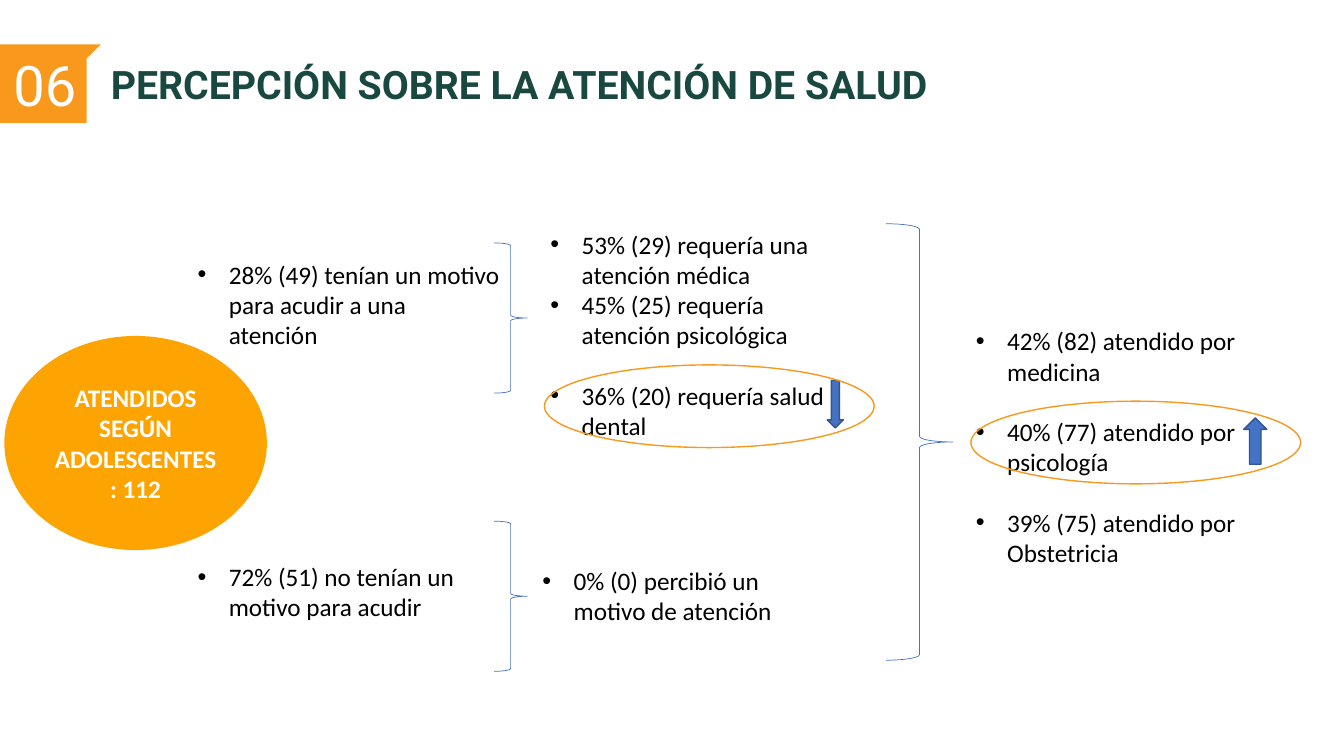
from pptx import Presentation, util as u
from pptx.dml.color import RGBColor
from pptx.enum import shapes, text
from pptx.oxml import parse_xml
from pptx.oxml.ns import nsdecls

PX = 9144  # 100 px to the inch
COLORS = {"title": "184840", "flag": "F8981C", "bubble": "FEA402", "blue": "4472C4",
          "edge": "325491", "white": "FFFFFF", "black": "000000"}
KIND = shapes.MSO_SHAPE
LINE_GAP = 21.6  # one empty line of 18 pt text, in points


def style_text(para, words, color, **font):
    span = para.add_run()
    span.text = words
    span.font.color.rgb = RGBColor.from_string(COLORS[color])
    for name, value in font.items():
        setattr(span.font, name, value)


def style_shape(shape, fill, line, width=1):
    shape.shadow.inherit = False
    if fill:
        shape.fill.solid()
        shape.fill.fore_color.rgb = RGBColor.from_string(COLORS[fill])
    else:
        shape.fill.background()
    if line:
        shape.line.color.rgb = RGBColor.from_string(COLORS[line])
        shape.line.width = u.Pt(width)
    else:
        shape.line.fill.background()


deck = Presentation()
deck.slide_width, deck.slide_height = 1333 * PX, 750 * PX
page = deck.slides.add_slide(deck.slide_layouts[4])  # title and four bodies

# Title
title = page.shapes.title
for name, value in zip(("left", "top", "width", "height"), (100, 34, 1084, 105)):
    setattr(title, name, value * PX)
for name, value in {"vertical_anchor": text.MSO_ANCHOR.MIDDLE, "word_wrap": True,
                    "auto_size": text.MSO_AUTO_SIZE.NONE}.items():
    setattr(title.text_frame, name, value)
para = title.text_frame.paragraphs[0]
para.alignment, para.line_spacing = text.PP_ALIGN.LEFT, 0.9
style_text(para, "PERCEPCIÓN SOBRE LA ATENCIÓN DE SALUD", "title",
           name="Roboto", size=u.Pt(28), bold=True)

# Section number flag
builder = page.shapes.build_freeform(-1, 44, scale=PX)
builder.add_line_segments([(-1, 122), (86, 122), (86, 58), (100, 44)], close=True)
flag = builder.convert_to_shape()
style_shape(flag, "flag", None)
for name, value in {"margin_left": 10 * PX, "margin_top": 10 * PX, "margin_right": 20 * PX,
                    "margin_bottom": 10 * PX, "word_wrap": True,
                    "vertical_anchor": text.MSO_ANCHOR.MIDDLE}.items():
    setattr(flag.text_frame, name, value)
para = flag.text_frame.paragraphs[0]
para.alignment = text.PP_ALIGN.CENTER
style_text(para, "06", "white", name="Roboto", size=u.Pt(40), bold=False)

# Bullet lists: place, then each item with the empty lines above it
lists = [
    ((186, 252, 320, 374), [("28% (49) tenían un motivo para acudir a una atención", 0),
                            ("72% (51) no tenían un motivo para acudir", 7)]),
    ((536, 222, 310, 222), [("53% (29) requería una atención médica", 0),
                            ("45% (25) requería atención psicológica", 0),
                            ("36% (20) requería salud dental", 1)]),
    ((958, 318, 310, 252), [("42% (82) atendido por medicina", 0),
                            ("40% (77) atendido por psicología", 1),
                            ("39% (75) atendido por Obstetricia", 1)]),
    ((528, 556, 310, 71), [("0% (0) percibió un motivo de atención", 0)]),
]
bodies = [box for box in page.placeholders if 1 <= box.placeholder_format.idx <= 4]
for box, (place, items) in zip(bodies, lists):
    for name, value in zip(("left", "top", "width", "height"), place):
        setattr(box, name, value * PX)
    for name, value in {"vertical_anchor": text.MSO_ANCHOR.TOP, "word_wrap": True,
                        "auto_size": text.MSO_AUTO_SIZE.NONE}.items():
        setattr(box.text_frame, name, value)
    for number, (words, empty_lines) in enumerate(items):
        para = box.text_frame.add_paragraph() if number else box.text_frame.paragraphs[0]
        for name, value in {"alignment": text.PP_ALIGN.LEFT, "line_spacing": 1.0,
                            "space_before": u.Pt(empty_lines * LINE_GAP),
                            "space_after": u.Pt(0)}.items():
            setattr(para, name, value)
        style_text(para, words, "black", name="Calibri", size=u.Pt(18), bold=False)
        props = para._p.get_or_add_pPr()
        props.set("marL", str(31 * PX))
        props.set("indent", str(-31 * PX))
        props.append(parse_xml(f'<a:buFont {nsdecls("a")} typeface="Arial"/>'))
        props.append(parse_xml(f'<a:buChar {nsdecls("a")} char="•"/>'))

# Braces, trend arrows, bubble and highlight rings
marks = [
    (KIND.RIGHT_BRACE, (490, 241, 33, 149), 0, None, "blue", 0.5),
    (KIND.RIGHT_BRACE, (490, 517, 33, 149), 0, None, "blue", 0.5),
    (KIND.RIGHT_BRACE, (879, 222, 66, 433), 0, None, "blue", 0.5),
    (KIND.RIGHT_ARROW, (1222, 426, 46, 23), 270, "blue", "edge", 1),
    (KIND.RIGHT_ARROW, (805, 393, 47, 16), 90, "blue", "edge", 1),
    (KIND.OVAL, (5, 334, 259, 211), 0, "bubble", "bubble", 1),
    (KIND.OVAL, (963, 398, 327, 82), 0, None, "flag", 1),
    (KIND.OVAL, (540, 362, 327, 82), 0, None, "flag", 1),
]
for kind, place, turn, fill, line, width in marks:
    mark = page.shapes.add_shape(kind, *(value * PX for value in place))
    mark.rotation = turn
    style_shape(mark, fill, line, width)
    if fill == "bubble":
        mark.text_frame.word_wrap = True
        mark.text_frame.vertical_anchor = text.MSO_ANCHOR.MIDDLE
        para = mark.text_frame.paragraphs[0]
        para.alignment = text.PP_ALIGN.CENTER
        style_text(para, "ATENDIDOS SEGÚN ADOLESCENTES: 112", "white",
                   name="Calibri", size=u.Pt(18), bold=True)

deck.save("out.pptx")
